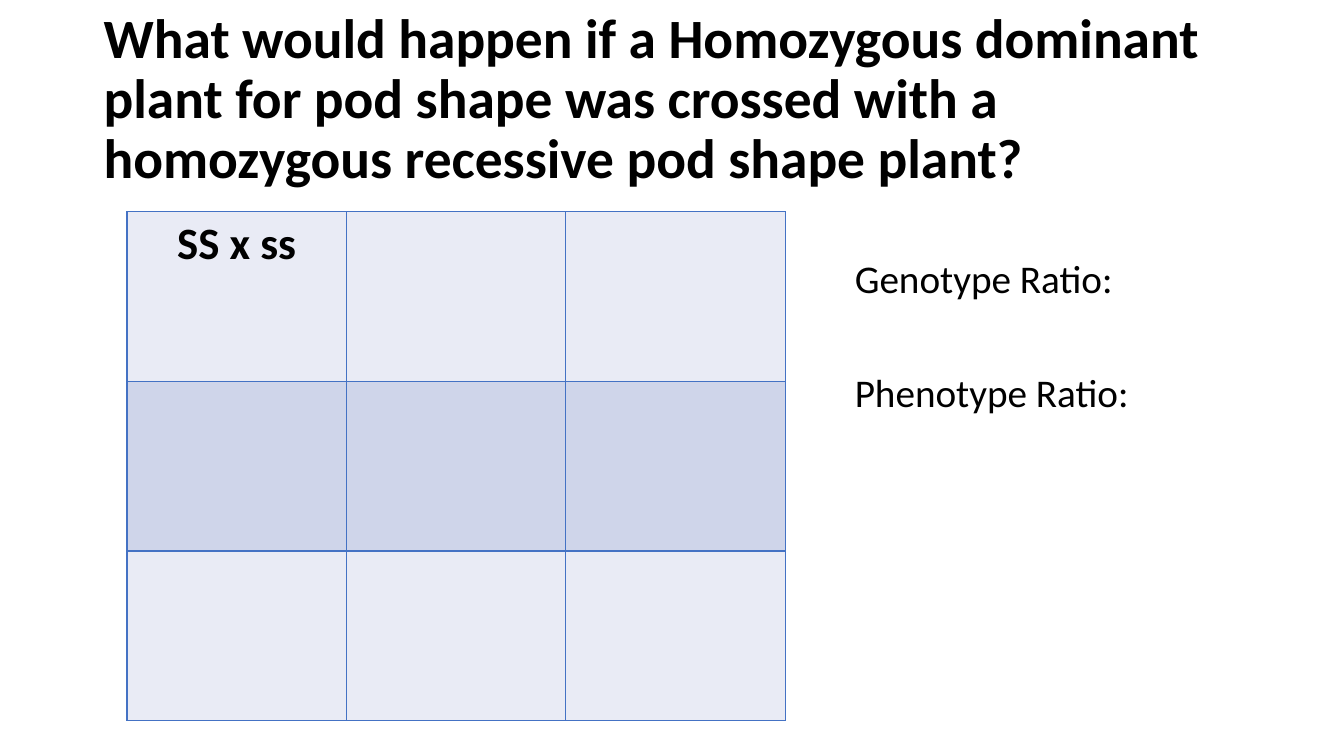
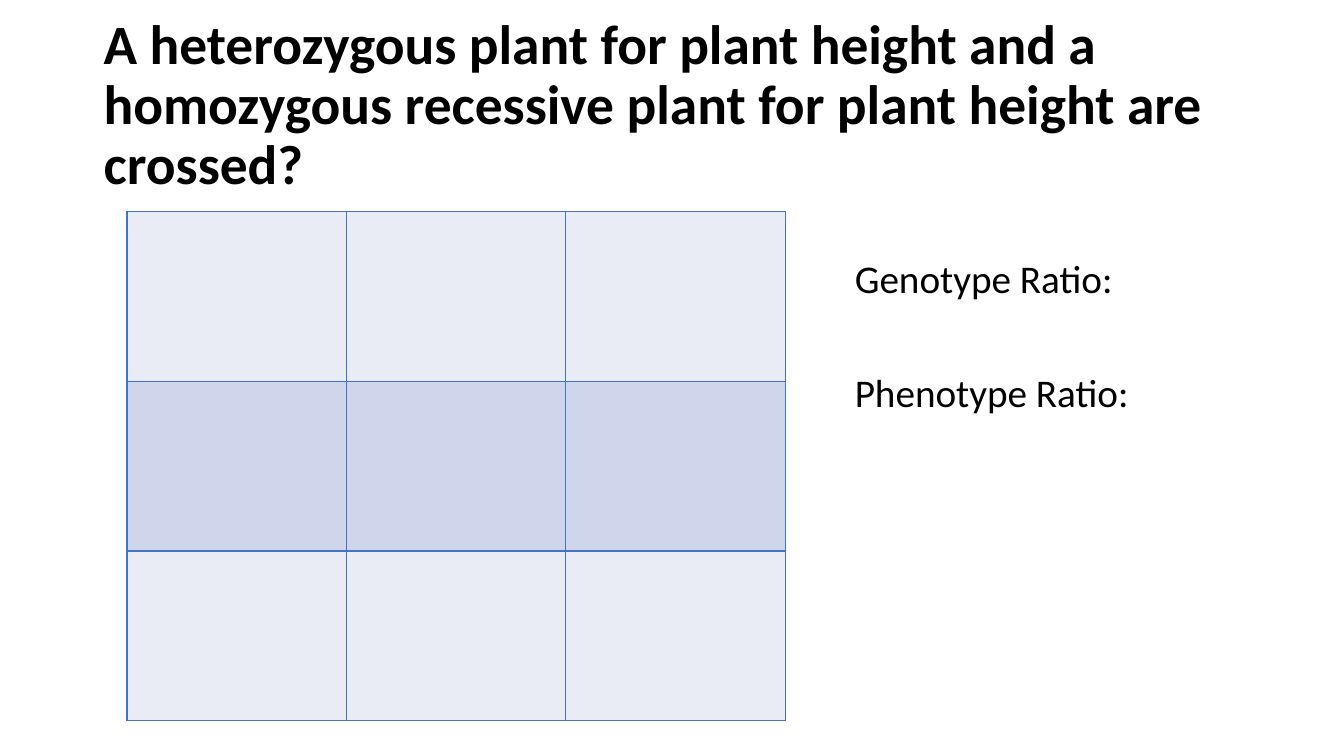
from dataclasses import dataclass

from lxml import etree
from pptx import Presentation
from pptx.dml.color import RGBColor
from pptx.enum.text import MSO_ANCHOR, PP_ALIGN
from pptx.oxml.ns import qn
from pptx.util import Inches, Pt

MIDDLE, TOP = MSO_ANCHOR.MIDDLE, MSO_ANCHOR.TOP
CENTER = PP_ALIGN.CENTER

# Content: question, vertical middle of its title, filled cells of the square
SLIDES = [
    {
        "title": "What would happen if a Homozygous dominant plant for pod shape "
                 "was crossed with a homozygous recessive pod shape plant?",
        "mid": 1.0,
        "cells": {(0, 0): "SS x ss"},
    },
    {
        "title": "A heterozygous plant for plant height and a homozygous "
                 "recessive plant for plant height are crossed?",
        "mid": 1.06,
        "cells": {},
    },
]
RATIOS = ["Genotype Ratio:", "Phenotype Ratio:"]


@dataclass(frozen=True)
class Theme:
    font: str = "Calibri"
    ink: str = "000000"
    line: str = "4472C4"
    bands: tuple = ("E9EBF5", "CFD5EA")
    title: float = 39.6
    cell: float = 32
    body: float = 28
    gaps: tuple = (10, 50.8)  # space before each ratio, in points


THEME = Theme()
WIDE, HIGH = 13.33, 7.5
LEFT, SPAN, TALL = 0.93, 11.34, 1.8  # title box
GRID = (1.26, 2.1, 6.53, 5.05)
SIDE = (8.38, 2.53, 2.94, 2.09)
COUNT = 3  # rows and columns of the square


def style(par, size, bold=False):
    font = par.font
    font.name, font.size, font.bold = THEME.font, Pt(size), bold
    font.color.rgb = RGBColor.from_string(THEME.ink)


def add_text(slide, box, lines, size, bold=False, anchor=TOP, gaps=(0,)):
    frame = slide.shapes.add_textbox(*map(Inches, box)).text_frame
    frame.word_wrap, frame.vertical_anchor = True, anchor
    frame.text = "\n".join(lines)
    for par, gap in zip(frame.paragraphs, gaps):
        par.line_spacing, par.space_before = 0.9, Pt(gap)
        style(par, size, bold)


def add_edges(cell):
    props = cell._tc.get_or_add_tcPr()
    for spot, side in enumerate(("lnL", "lnR", "lnT", "lnB")):
        edge = etree.Element(qn("a:" + side), w=str(Pt(1)))
        fill = etree.SubElement(edge, qn("a:solidFill"))
        etree.SubElement(fill, qn("a:srgbClr"), val=THEME.line)
        props.insert(spot, edge)


def add_square(slide, cells):
    table = slide.shapes.add_table(COUNT, COUNT, *map(Inches, GRID)).table
    table.first_row = table.horz_banding = False
    for row in range(COUNT):
        for col in range(COUNT):
            cell = table.cell(row, col)
            cell.fill.solid()
            cell.fill.fore_color.rgb = RGBColor.from_string(THEME.bands[row % 2])
            add_edges(cell)
            if (row, col) in cells:
                cell.text = cells[row, col]
                par = cell.text_frame.paragraphs[0]
                par.alignment = CENTER
                style(par, THEME.cell, True)


def main():
    deck = Presentation()
    deck.slide_width, deck.slide_height = Inches(WIDE), Inches(HIGH)
    for item in SLIDES:
        slide = deck.slides.add_slide(deck.slide_layouts[6])
        # Question
        box = (LEFT, item["mid"] - TALL / 2, SPAN, TALL)
        add_text(slide, box, [item["title"]], THEME.title, True, MIDDLE)
        # Ratios to fill in
        add_text(slide, SIDE, RATIOS, THEME.body, gaps=THEME.gaps)
        # Punnett square
        add_square(slide, item["cells"])
    deck.save("out.pptx")


if __name__ == "__main__":
    main()
